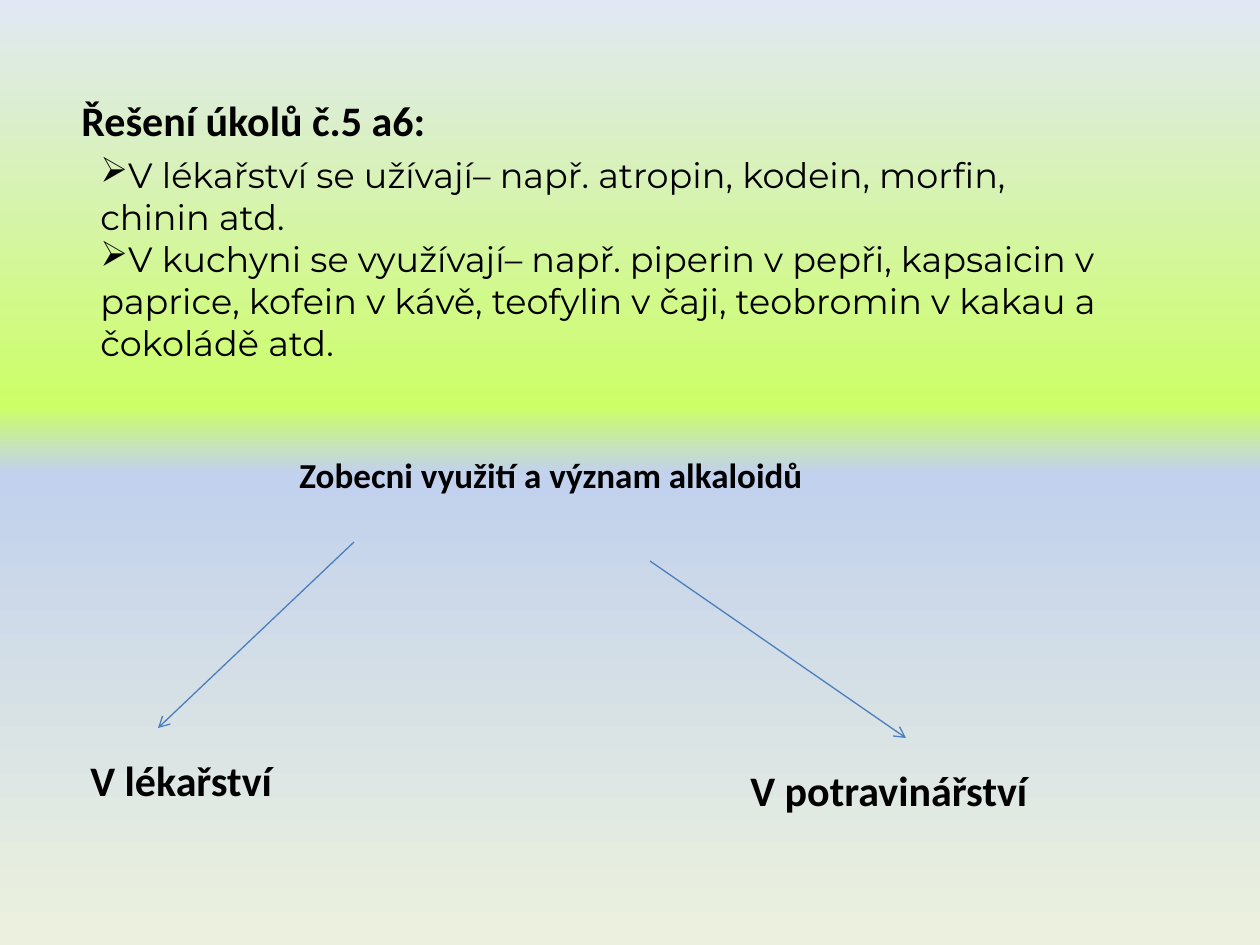
"""Build the slide on the uses of alkaloids."""
from dataclasses import dataclass

from lxml import etree
from pptx import Presentation
from pptx import util as u
from pptx.dml.color import RGBColor
from pptx.enum import shapes, text
from pptx.oxml.ns import qn

BLACK = RGBColor(0x00, 0x00, 0x00)
BLUE = RGBColor(0x4B, 0x7E, 0xBC)
CREAM = RGBColor(0xEB, 0xF1, 0xDE)
SKY = RGBColor(0xC2, 0xD1, 0xED)
LIME = RGBColor(0xCC, 0xFF, 0x66)
MIST = RGBColor(0xE1, 0xE8, 0xF5)
STOPS = ((1, CREAM), (50, SKY), (57, LIME), (100, MIST))


def px(n: int) -> u.Emu:
    """Turn px into EMU."""
    return u.Emu(round(n * 914400 / 126))


@dataclass
class Label:
    """A text box, with lengths in px."""
    lines: tuple[str, ...]
    x: int
    y: int
    w: int
    h: int
    size: int = 24
    font: str = "Calibri"
    bold: bool = True
    wrap: bool = True
    indent: int = 0
    bullet: str = ""


@dataclass
class Arrow:
    """An arrow, with ends in px."""
    x1: int
    y1: int
    x2: int
    y2: int


LABELS = (
    Label(("Řešení úkolů č.5 a6:",), 69, 88, 1162, 63),
    Label(("Zobecni využití a význam alkaloidů",), 88, 447, 916, 55,
          size=20, indent=199),
    Label(("V lékařství se užívají– např. atropin, kodein, morfin, chinin atd.",
           "V kuchyni se využívají– např. piperin v pepři, kapsaicin v paprice, "
           "kofein v kávě, teofylin v čaji, teobromin v kakau a čokoládě atd."),
          88, 147, 1033, 224, size=20, font="Montserrat", bold=False,
          bullet="➢"),
    Label(("V lékařství",), 78, 748, 209, 63, wrap=False),
    Label(("V potravinářství",), 738, 758, 315, 63, wrap=False),
)
ARROWS = (Arrow(354, 542, 158, 728), Arrow(650, 561, 906, 738))


def paint(slide) -> None:
    """Fill the background with the gradient, from bottom to top."""
    fill = slide.background.fill
    fill.gradient()
    fill.gradient_angle = 90
    stops = next(slide.element.iter(qn("a:gsLst")))
    stops[:] = []
    for pos, tint in STOPS:
        stop = etree.SubElement(stops, qn("a:gs"), pos=str(pos * 1000))
        etree.SubElement(stop, qn("a:srgbClr"), val=str(tint))


def write(slide, label: Label) -> None:
    """Draw a text box."""
    box = slide.shapes.add_textbox(*map(px, (label.x, label.y, label.w, label.h)))
    frame = box.text_frame
    frame.word_wrap = label.wrap
    frame.auto_size = text.MSO_AUTO_SIZE.SHAPE_TO_FIT_TEXT
    frame.text = "\n".join(label.lines)
    for para in frame.paragraphs:
        props = para._p.get_or_add_pPr()
        props.set("marL", str(px(label.indent)))
        props.set("indent", "0")
        if label.bullet:
            etree.SubElement(props, qn("a:buChar"), char=label.bullet)
        for run in para.runs:
            font = run.font
            font.name, font.size = label.font, u.Pt(label.size)
            font.bold = label.bold
            font.color.rgb = BLACK


def point(slide, arrow: Arrow) -> None:
    """Draw an arrow."""
    line = slide.shapes.add_connector(
        shapes.MSO_CONNECTOR.STRAIGHT,
        *map(px, (arrow.x1, arrow.y1, arrow.x2, arrow.y2)))
    line.line.color.rgb = BLUE
    line.line.width = u.Pt(0.75)
    etree.SubElement(line.line._get_or_add_ln(), qn("a:tailEnd"), type="arrow")
    etree.SubElement(line._element.spPr, qn("a:effectLst"))


def main() -> None:
    """Build and save the slide."""
    deck = Presentation()
    deck.slide_width, deck.slide_height = px(1260), px(945)
    slide = deck.slides.add_slide(deck.slide_layouts[6])
    paint(slide)
    for label in LABELS:
        write(slide, label)
    for arrow in ARROWS:
        point(slide, arrow)
    deck.save("out.pptx")


if __name__ == "__main__":
    main()
